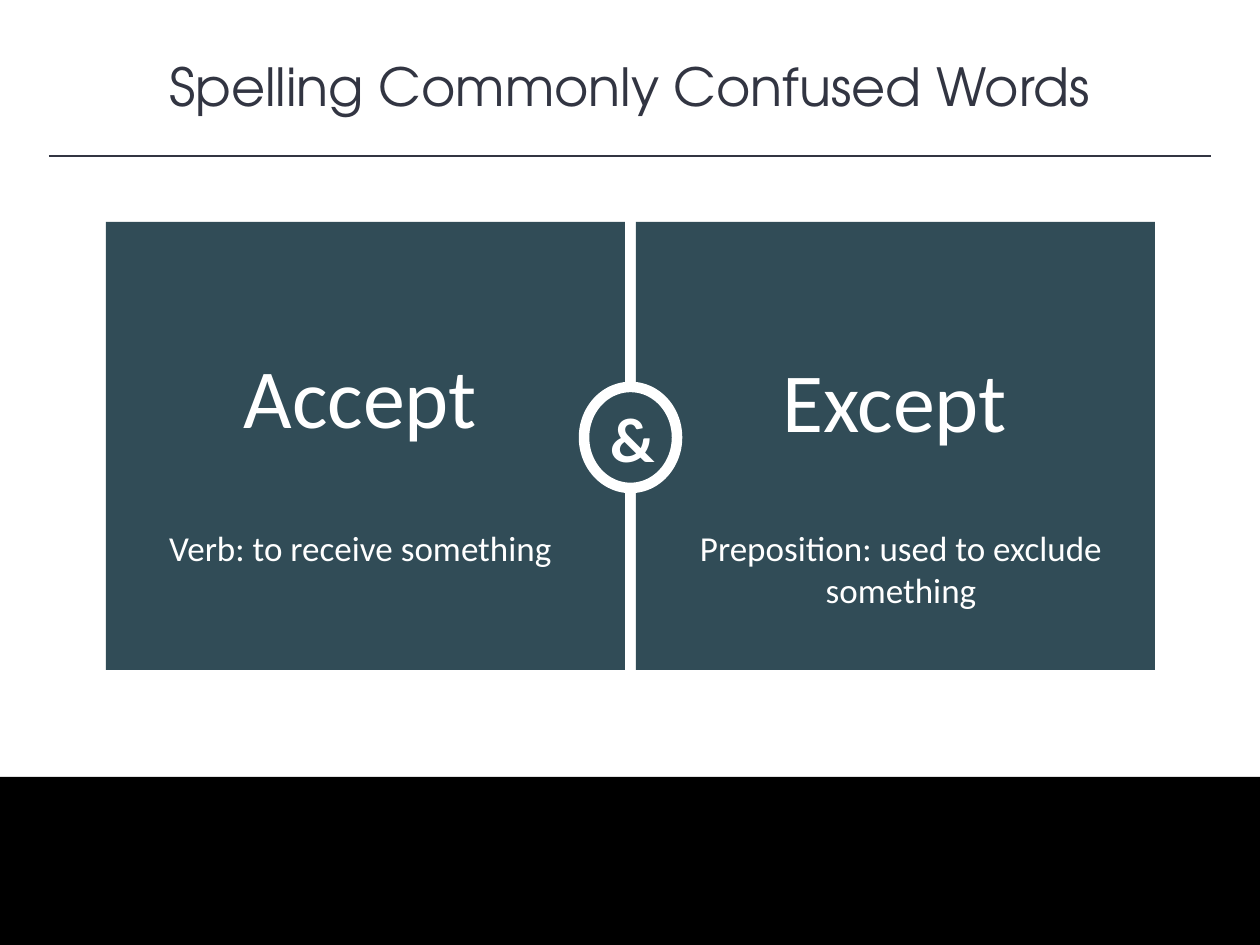
import pptx
import pptx.dml.color
import pptx.enum.shapes
import pptx.enum.text
import pptx.oxml.ns
import pptx.util
import lxml.etree

COLORS = {"ink": "323542", "panel": "314C57", "white": "FFFFFF", "black": "000000"}
PIXELS_PER_INCH = 126


def px(length):
    """Turn a length in px into EMU."""
    return pptx.util.Emu(round(length * 914400 / PIXELS_PER_INCH))


def color(name):
    """Return the named colour."""
    return pptx.dml.color.RGBColor.from_string(COLORS[name])


def add_block(slide, box, fill, kind="RECTANGLE"):
    """Add a filled shape without outline or shadow."""
    preset = getattr(pptx.enum.shapes.MSO_SHAPE, kind)
    shape = slide.shapes.add_shape(preset, *map(px, box))
    shape.shadow.inherit = False
    shape.fill.solid()
    shape.fill.fore_color.rgb = color(fill)
    shape.line.fill.background()
    return shape


def write(shape, text, size, ink="white", font="Calibri", bold=False, spacing=1.0):
    """Write one centred paragraph into a shape."""
    frame = shape.text_frame
    frame.word_wrap = True
    frame.vertical_anchor = pptx.enum.text.MSO_ANCHOR.MIDDLE
    paragraph = frame.paragraphs[0]
    paragraph.alignment = pptx.enum.text.PP_ALIGN.CENTER
    paragraph.line_spacing = spacing
    run = paragraph.add_run()
    run.text = text
    run.font.name = font
    run.font.size = pptx.util.Pt(size)
    run.font.bold = bold
    run.font.color.rgb = color(ink)


def add_header(slide, left, top, width, height):
    """Add the title and the rule below it."""
    title = slide.shapes.add_textbox(*map(px, (left, top, width, height)))
    write(title, "Spelling Commonly Confused Words", 30, "ink", "TeX Gyre Adventor")
    margin, rule_top = 49, top + 109
    rule = slide.shapes.add_connector(
        pptx.enum.shapes.MSO_CONNECTOR.STRAIGHT,
        px(left + margin), px(rule_top), px(left + width - margin), px(rule_top))
    rule.line.color.rgb = color("ink")
    rule.line.width = pptx.util.Pt(1)
    lxml.etree.SubElement(rule._element.spPr, pptx.oxml.ns.qn("a:effectLst"))


def add_word(slide, left, top, word, word_offset, definition, definition_box):
    """Add a word and its definition on a panel."""
    offset_left, offset_top = word_offset
    label = add_block(slide, (left + offset_left, top + offset_top, 413, 150), "panel")
    write(label, word, 48, spacing=1.5)
    inner_left, inner_top, width, height = definition_box
    note = slide.shapes.add_textbox(
        px(left + inner_left), px(top + inner_top), px(width), px(height))
    write(note, definition, 20)


def add_comparison(slide, left, top, width, height):
    """Add two panels joined by an ampersand badge."""
    gap = 11
    panel_width = (width - gap) // 2
    lefts = [left, left + panel_width + gap]
    for panel_left in lefts:
        add_block(slide, (panel_left, top, panel_width, height), "panel")
    badge_width, badge_height = 93, 101
    badge = add_block(
        slide, (left + (width - badge_width) // 2, top + 165, badge_width, badge_height),
        "panel", "OVAL")
    badge.line.color.rgb = color("white")
    badge.line.width = pptx.util.Pt(6)
    write(badge, "&", 36, bold=True)
    words = [
        ("Accept", (48, 73), "Verb: to receive something", (48, 298, 413, 55)),
        ("Except", (52, 77), "Preposition: used to exclude something", (20, 298, 490, 97)),
    ]
    for panel_left, entry in zip(lefts, words):
        add_word(slide, panel_left, top, *entry)


def main():
    """Build and save the presentation."""
    presentation = pptx.Presentation()
    presentation.slide_width, presentation.slide_height = px(1260), px(945)
    slide = presentation.slides.add_slide(presentation.slide_layouts[6])
    slide.background.fill.solid()
    slide.background.fill.fore_color.rgb = color("white")
    add_header(slide, 0, 47, 1260, 77)
    add_block(slide, (0, 777, 1260, 168), "black")
    add_comparison(slide, 106, 222, 1049, 448)
    presentation.save("out.pptx")


if __name__ == "__main__":
    main()
